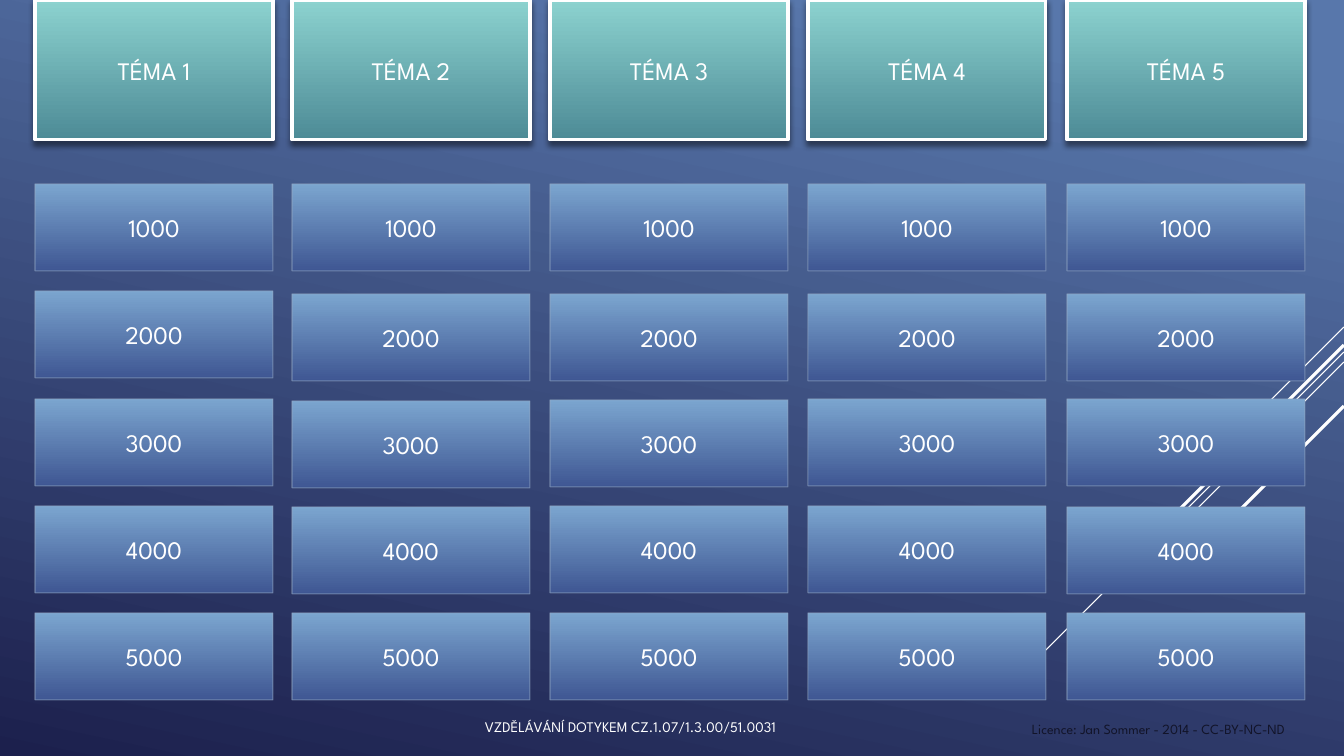
"""Build a quiz board with five themes and five point values for each."""
from lxml.etree import SubElement
from pptx import Presentation
from pptx.dml.color import RGBColor
from pptx.enum.shapes import MSO_CONNECTOR, MSO_SHAPE
from pptx.enum.text import MSO_ANCHOR, PP_ALIGN
from pptx.oxml.ns import qn
from pptx.util import Pt

SCALE = 914400 / 100.8
FONT = "League Spartan"
COLORS = {
    "white": "FFFFFF", "licence": "121429", "shadow": "000000",
    "sky": "5877AB", "night": "1C204D",
    "theme_top": "8CD2CF", "theme_bottom": "4D8B96",
    "points_top": "7BA5CF", "points_bottom": "3F5793", "points_line": "94A9C4",
}
TILE_WIDTH, THEME_HEIGHT, POINTS_HEIGHT = 238, 140, 87
COLUMN_LEFTS = [35, 292, 550, 808, 1067]
ROW_TOPS = [
    [184, 184, 184, 184, 184],
    [291, 294, 294, 294, 294],
    [399, 401, 400, 399, 399],
    [506, 507, 506, 506, 507],
    [613, 613, 613, 613, 613],
]


def paint_gradient(fill, stops, angle):
    fill.gradient()
    fill.gradient_angle = angle
    for stop, (position, color) in zip(fill.gradient_stops, stops):
        stop.position = position
        stop.color.rgb = RGBColor.from_string(COLORS[color])


def write_text(shape, text, size, color, align, anchor):
    frame = shape.text_frame
    frame.word_wrap = True
    frame.vertical_anchor = anchor
    paragraph = frame.paragraphs[0]
    paragraph.alignment = align
    run = paragraph.add_run()
    run.text = text
    for name, value in {"name": FONT, "size": Pt(size)}.items():
        setattr(run.font, name, value)
    run.font.color.rgb = RGBColor.from_string(COLORS[color])


presentation = Presentation()
presentation.slide_width = round(1344 * SCALE)
presentation.slide_height = round(756 * SCALE)
slide = presentation.slides.add_slide(presentation.slide_layouts[6])
paint_gradient(slide.background.fill, [(0.1, "sky"), (1, "night")], 258)

for top, length, weight in [(327, 101, 0.75), (352, 329, 0.75), (362, 209, 0.75),
                            (345, 193, 2.25), (406, 140, 2.25)]:
    ends = [round(value * SCALE) for value in (1344, top, 1344 - length, top + length)]
    streak = slide.shapes.add_connector(MSO_CONNECTOR.STRAIGHT, *ends)
    streak.line.color.rgb = RGBColor.from_string(COLORS["white"])
    streak.line.width = Pt(weight)
    SubElement(streak._element.spPr, qn("a:effectLst"))

tiles = [(left, 0, THEME_HEIGHT, f"TÉMA {number}", "theme", "white", 2.25)
         for number, left in enumerate(COLUMN_LEFTS, 1)]
for row, tops in enumerate(ROW_TOPS, 1):
    for left, top in zip(COLUMN_LEFTS, tops):
        tiles.append((left, top, POINTS_HEIGHT, str(row * 1000), "points", "points_line", 0.75))

for left, top, height, text, kind, outline, weight in tiles:
    box = [round(value * SCALE) for value in (left, top, TILE_WIDTH, height)]
    tile = slide.shapes.add_shape(MSO_SHAPE.RECTANGLE, *box)
    tile.shadow.inherit = False
    paint_gradient(tile.fill, [(0, f"{kind}_top"), (1, f"{kind}_bottom")], 270)
    tile.line.color.rgb = RGBColor.from_string(COLORS[outline])
    tile.line.width = Pt(weight)
    properties = tile._element.spPr
    if kind == "theme":
        shadow = SubElement(properties.find(qn("a:effectLst")), qn("a:outerShdw"),
                            blurRad=str(Pt(4)), dist=str(Pt(3)), dir="5400000",
                            algn="ctr", rotWithShape="0")
        shade = SubElement(shadow, qn("a:srgbClr"), val=COLORS["shadow"])
        SubElement(shade, qn("a:alpha"), val="46000")
    else:
        line_color = properties.find(f"{qn('a:ln')}/{qn('a:solidFill')}/{qn('a:srgbClr')}")
        SubElement(line_color, qn("a:alpha"), val="60000")
    write_text(tile, text, 18, "white", PP_ALIGN.CENTER, MSO_ANCHOR.MIDDLE)

for bounds, text, size, color, anchor in [
    ((1022, 716, 322, 40), "Licence: Jan Sommer - 2014 - CC-BY-NC-ND", 10, "licence", MSO_ANCHOR.TOP),
    ((475, 707, 359, 40), "VZDĚLÁVÁNÍ DOTYKEM CZ.1.07/1.3.00/51.0031", 10.5, "white", MSO_ANCHOR.MIDDLE),
]:
    footer = slide.shapes.add_textbox(*[round(value * SCALE) for value in bounds])
    write_text(footer, text, size, color, PP_ALIGN.LEFT, anchor)

presentation.save("out.pptx")
